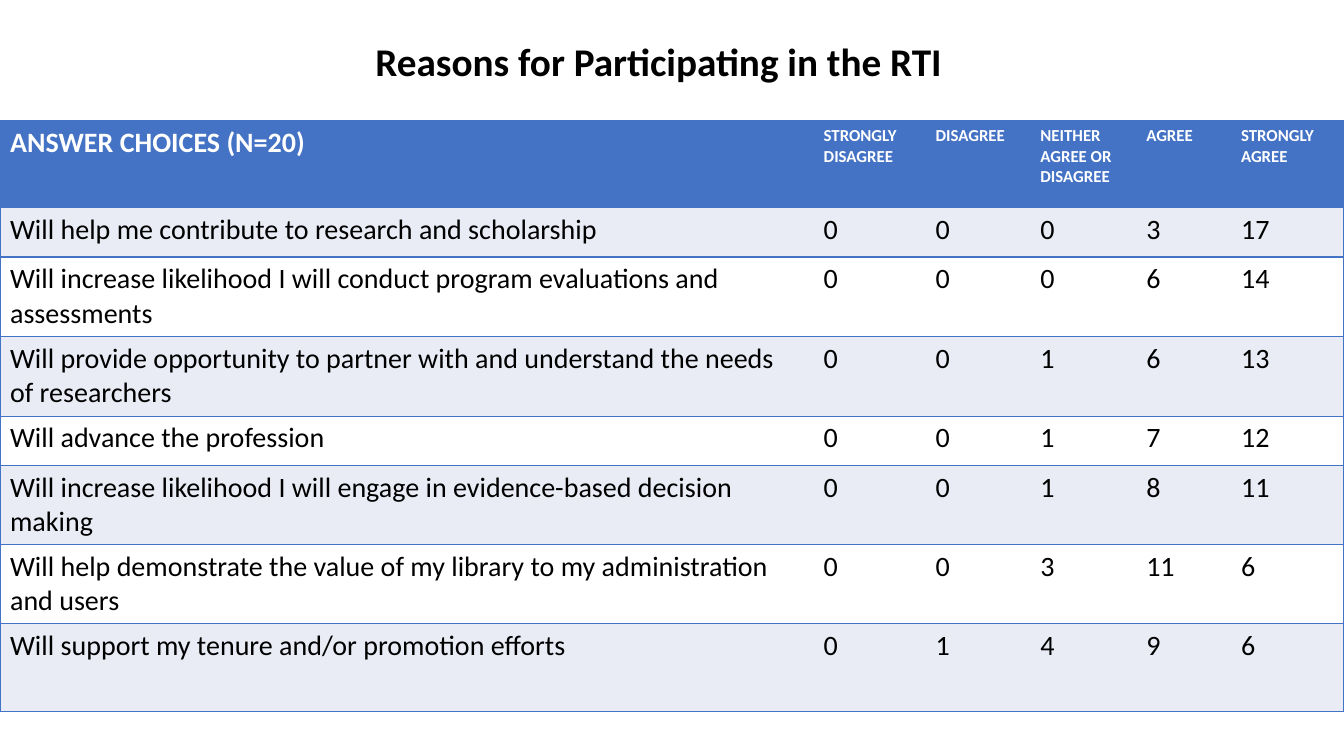
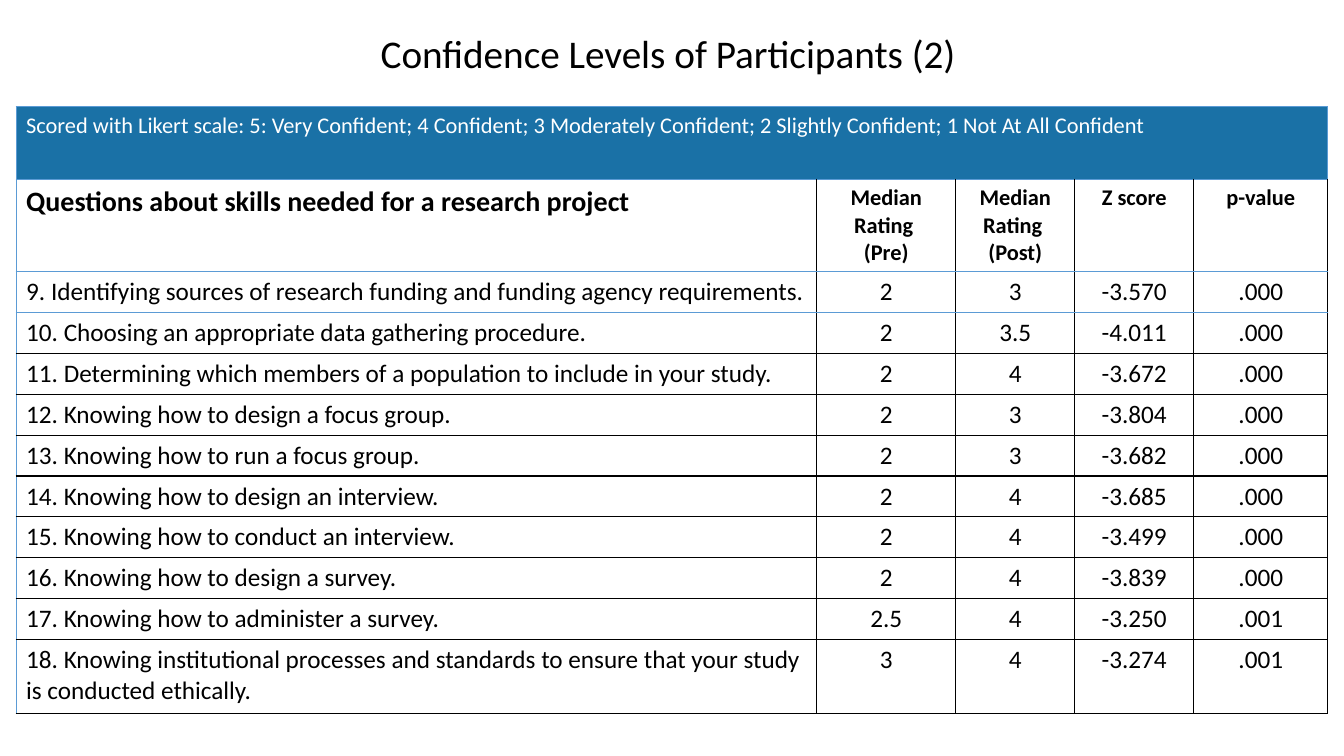
from dataclasses import dataclass

from lxml import etree
from pptx import Presentation
from pptx.dml.color import RGBColor
from pptx.enum.text import MSO_ANCHOR, MSO_AUTO_SIZE, PP_ALIGN
from pptx.oxml.ns import qn
from pptx.util import Pt

LEFT, CENTER = PP_ALIGN.LEFT, PP_ALIGN.CENTER
PX = 9144  # 100 px to the inch
SLIDE_SIZE = (1333, 750)
TITLE_ONLY = 5
PLAIN_TABLE_STYLE = "{2D5ABB26-0587-4C30-8999-92F81FD0307C}"
SIDES = {"left": "a:lnL", "right": "a:lnR", "top": "a:lnT", "bottom": "a:lnB"}


@dataclass(frozen=True)
class Theme:
    font: str = "Calibri"
    text: str = "000000"
    light: str = "FFFFFF"
    reasons_blue: str = "4472C4"
    reasons_band: str = "E9EBF5"
    scale_blue: str = "1A71A6"
    scale_line: str = "5B9BD5"
    title_size: int = 28
    large_size: int = 20
    body_size: int = 18
    label_size: int = 16
    small_size: int = 12
    line_width: int = 1


THEME = Theme()

REASONS = {
    "title": "Reasons for Participating in the RTI ",
    "title_box": (-19, 32, 1353, 104),
    "title_bold": True,
    "origin": (0, 120),
    "columns": [807, 111, 104, 105, 94, 112],
    "rows": [86, 49, 79, 79, 49, 77, 79, 87],
    "cells": [
        ("ANSWER CHOICES (N=20)", "STRONGLY DISAGREE", "DISAGREE",
         "NEITHER AGREE OR DISAGREE", "AGREE", "STRONGLY AGREE"),
        ("Will help me contribute to research and scholarship", 0, 0, 0, 3, 17),
        ("Will increase likelihood I will conduct program evaluations and assessments",
         0, 0, 0, 6, 14),
        ("Will provide opportunity to partner with and understand the needs of researchers",
         0, 0, 1, 6, 13),
        ("Will advance the profession", 0, 0, 1, 7, 12),
        ("Will increase likelihood I will engage in evidence-based decision making",
         0, 0, 1, 8, 11),
        ("Will help demonstrate the value of my library to my administration and users",
         0, 0, 3, 11, 6),
        ("Will support my tenure and/or promotion efforts", 0, 1, 4, 9, 6),
    ],
}

CONFIDENCE = {
    "title": "Confidence Levels of Participants (2) ",
    "title_box": (32, 24, 1270, 57),
    "title_bold": False,
    "origin": (16, 106),
    "columns": [794, 138, 118, 118, 133],
    "rows": [72, 91] + [40] * 9 + [73],
    "cells": [
        ("Scored with Likert scale: 5: Very Confident; 4 Confident; 3 Moderately Confident; "
         "2 Slightly Confident; 1 Not At All Confident",),
        ("Questions about skills needed for a research project",
         "Median Rating \n(Pre)", "Median Rating \n(Post)", "Z score", "p-value"),
        ("9. Identifying sources of research funding and funding agency requirements.",
         "2", "3", "-3.570", ".000"),
        ("10. Choosing an appropriate data gathering procedure.", "2", "3.5", "-4.011", ".000"),
        ("11. Determining which members of a population to include in your study.",
         "2", "4", "-3.672", ".000"),
        ("12. Knowing how to design a focus group.", "2", "3", "-3.804", ".000"),
        ("13. Knowing how to run a focus group.", "2", "3", "-3.682", ".000"),
        ("14. Knowing how to design an interview.", "2", "4", "-3.685", ".000"),
        ("15. Knowing how to conduct an interview.", "2", "4", "-3.499", ".000"),
        ("16. Knowing how to design a survey.", "2", "4", "-3.839", ".000"),
        ("17. Knowing how to administer a survey.", "2.5", "4", "-3.250", ".001"),
        ("18. Knowing institutional processes and standards to ensure that your study "
         "is conducted ethically.", "3", "4", "-3.274", ".001"),
    ],
}


def px(*lengths):
    return [length * PX for length in lengths]


def write_text(text_frame, text, size, color=THEME.text, bold=False, align=LEFT):
    for index, line in enumerate(text.split("\n")):
        paragraph = text_frame.paragraphs[0] if index == 0 else text_frame.add_paragraph()
        paragraph.alignment = align
        run = paragraph.add_run()
        run.text = line
        run.font.name = THEME.font
        run.font.size = Pt(size)
        run.font.bold = bold
        run.font.color.rgb = RGBColor.from_string(color)


def set_borders(cell, colors):
    """Draw cell borders from a side-to-colour dict; must run before the fill is set."""
    properties = cell._tc.get_or_add_tcPr()
    for side, tag in SIDES.items():
        if side in colors:
            line = etree.SubElement(properties, qn(tag), w=str(Pt(THEME.line_width)))
            fill = etree.SubElement(line, qn("a:solidFill"))
            etree.SubElement(fill, qn("a:srgbClr"), val=colors[side])


def reasons_style(row, column):
    """Return borders, fill and text format of a cell in the reasons table."""
    header = row == 0
    sides = ["top", "bottom"]
    if column == 0:
        sides.append("left")
    if column == len(REASONS["columns"]) - 1:
        sides.append("right")
    borders = dict.fromkeys(sides, THEME.reasons_blue)
    if header:
        size = THEME.large_size if column == 0 else THEME.small_size
        return borders, THEME.reasons_blue, dict(size=size, color=THEME.light, bold=True)
    fill = THEME.reasons_band if row % 2 else THEME.light
    return borders, fill, dict(size=THEME.large_size)


def confidence_style(row, column):
    """Return borders, fill and text format of a cell in the confidence table."""
    if row == 0:
        borders = dict.fromkeys(SIDES, THEME.scale_line)
        return borders, THEME.scale_blue, dict(size=THEME.label_size, color=THEME.light)
    borders = {
        "left": THEME.scale_line if column == 0 else THEME.text,
        "right": THEME.text,
        "top": THEME.scale_line if row <= 3 else THEME.text,
        "bottom": THEME.scale_line if row <= 2 else THEME.text,
    }
    size = THEME.body_size
    if row == 1:
        size = THEME.large_size if column == 0 else THEME.label_size
    align = LEFT if column == 0 else CENTER
    return borders, None, dict(size=size, bold=row == 1, align=align)


def add_title(slide, content):
    title = slide.shapes.title
    title.left, title.top, title.width, title.height = px(*content["title_box"])
    text_frame = title.text_frame
    text_frame.word_wrap = True
    text_frame.auto_size = MSO_AUTO_SIZE.NONE
    text_frame.vertical_anchor = MSO_ANCHOR.TOP
    write_text(text_frame, content["title"], THEME.title_size,
               bold=content["title_bold"], align=CENTER)


def add_styled_table(slide, content, style):
    """Build the table; a row holding a single text is merged across all columns."""
    widths, heights = content["columns"], content["rows"]
    frame = slide.shapes.add_table(
        len(heights), len(widths), *px(*content["origin"], sum(widths), sum(heights)))
    table = frame.table
    table.first_row = table.horz_banding = False
    table._tbl.tblPr.find(qn("a:tableStyleId")).text = PLAIN_TABLE_STYLE
    for column, width in zip(table.columns, px(*widths)):
        column.width = width
    for row, height in zip(table.rows, px(*heights)):
        row.height = height

    for row, texts in enumerate(content["cells"]):
        if len(texts) == 1:
            table.cell(row, 0).merge(table.cell(row, len(widths) - 1))
        for column in range(len(widths)):
            cell = table.cell(row, column)
            borders, fill, text_format = style(row, column)
            set_borders(cell, borders)
            if fill:
                cell.fill.solid()
                cell.fill.fore_color.rgb = RGBColor.from_string(fill)
            else:
                cell.fill.background()
            if column < len(texts):
                write_text(cell.text_frame, str(texts[column]), **text_format)


def main():
    presentation = Presentation()
    presentation.slide_width, presentation.slide_height = px(*SLIDE_SIZE)
    layout = presentation.slide_layouts[TITLE_ONLY]
    for content, style in ((REASONS, reasons_style), (CONFIDENCE, confidence_style)):
        slide = presentation.slides.add_slide(layout)
        add_title(slide, content)
        add_styled_table(slide, content, style)
    presentation.save("out.pptx")


if __name__ == "__main__":
    main()
